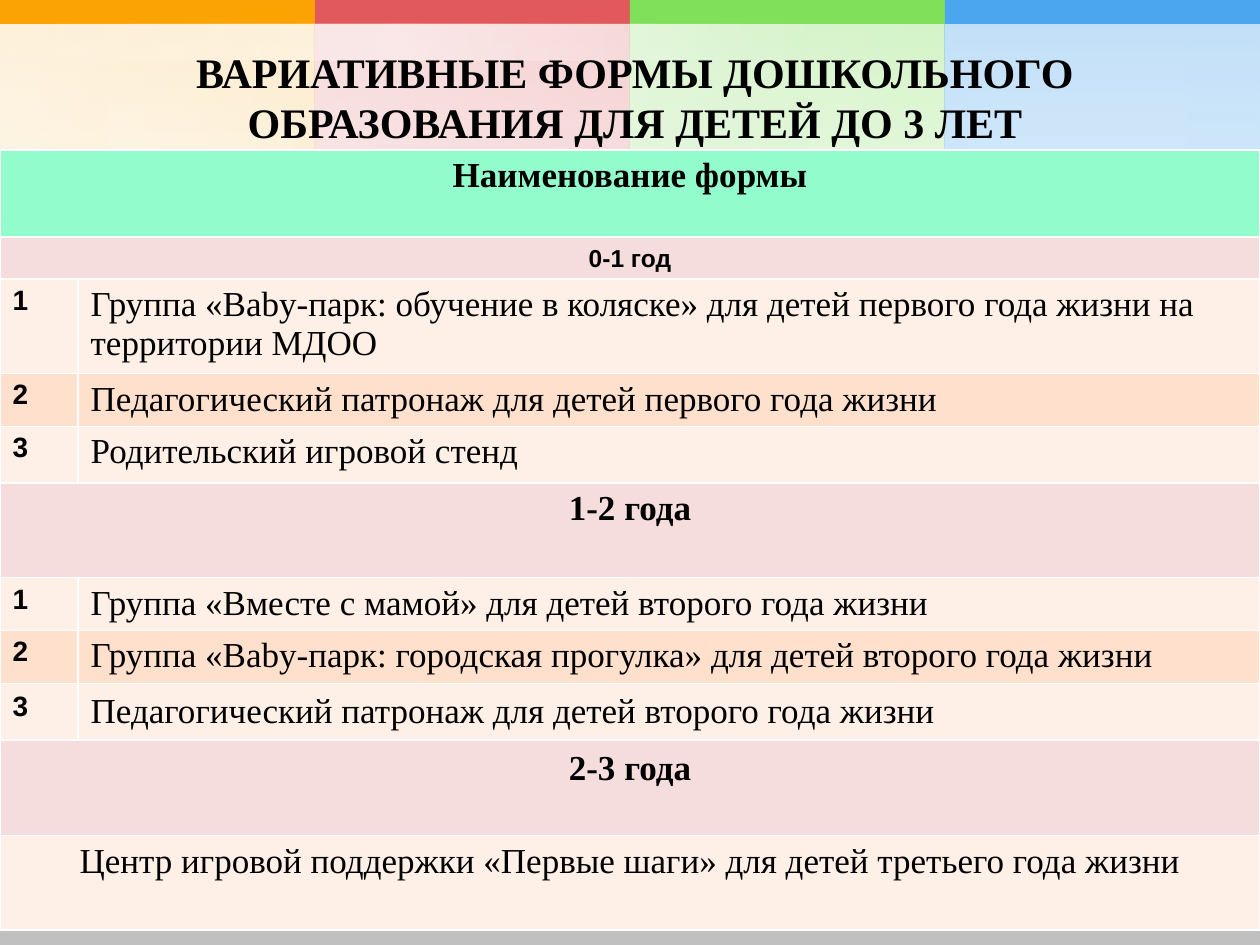
from lxml import etree
from pptx import Presentation
from pptx.dml.color import RGBColor
from pptx.enum.shapes import MSO_SHAPE as Shape
from pptx.enum.text import MSO_ANCHOR as Anchor, PP_ALIGN as Align
from pptx.oxml import parse_xml
from pptx.oxml.ns import nsdecls, qn
from pptx.util import Inches, Pt

SERIF, SANS = "Times New Roman", "Arial"
ORANGE, RED, GREEN, BLUE = "FCA304", "E1595C", "80E05A", "4BA5EF"
WHITE, BLACK, GREY = "FFFFFF", "000000", "C0C0C0"
MINT, PINK, CREAM, PEACH = "92FCCC", "F5DCDD", "FEF0E7", "FEE0CC"

HEADING = dict(name=SERIF, size=Pt(20), bold=True)
AGE = dict(name=SANS, size=Pt(14), bold=True)
NUMBER = dict(name=SANS, size=Pt(16), bold=True)
ENTRY = dict(name=SERIF, size=Pt(20), bold=False)


def color(value):
    return RGBColor.from_string(value)


def fade(tint, alpha):
    """Stops of a gradient that fades out downwards."""
    return [(0, tint, alpha), (100, WHITE, 0)]


def glow(tint, alpha):
    """Stops of a gradient that is strongest in the middle."""
    return [(0, WHITE, 0), (50, tint, alpha), (100, WHITE, 0)]


class SlideBuilder:
    def __init__(self, deck):
        self.page = deck.slides.add_slide(deck.slide_layouts[5])

    def group(self):
        return self.page.shapes.add_group_shape().shapes

    def rect(self, shapes, bounds, fill, rotation=0):
        shape = shapes.add_shape(Shape.RECTANGLE, *map(Inches, bounds))
        shape.shadow.inherit = False
        shape.line.fill.background()
        shape.rotation = rotation
        if isinstance(fill, str):
            shape.fill.solid()
            shape.fill.fore_color.rgb = color(fill)
        else:
            self.gradient(shape, fill)

    def gradient(self, shape, stops):
        shape.fill.background()
        gradient = parse_xml(
            f'<a:gradFill {nsdecls("a")} rotWithShape="1"><a:gsLst/>'
            '<a:lin ang="5400000" scaled="0"/></a:gradFill>')
        for position, tint, alpha in stops:
            stop = etree.SubElement(gradient[0], qn("a:gs"), pos=str(position * 1000))
            rgb = etree.SubElement(stop, qn("a:srgbClr"), val=tint)
            etree.SubElement(rgb, qn("a:alpha"), val=str(alpha * 1000))
        properties = shape.element.spPr
        properties.replace(properties.find(qn("a:noFill")), gradient)

    def text(self, frame, words, style, align, spacing=1.0):
        para = frame.paragraphs[0]
        para.alignment = align
        para.line_spacing = spacing
        span = para.add_run()
        span.text = words
        span.font.color.rgb = color(BLACK)
        for key, value in style.items():
            setattr(span.font, key, value)

    def title(self, bounds, words, style):
        box = self.page.shapes.title
        box.left, box.top, box.width, box.height = map(Inches, bounds)
        frame = box.text_frame
        frame.word_wrap = True
        frame.vertical_anchor = Anchor.BOTTOM
        frame.margin_bottom = Inches(0.38)
        self.text(frame, words, style, Align.CENTER)
        # Bring the title in front of the background
        box.element.getparent().append(box.element)

    def table(self, bounds, widths, rows):
        table = self.page.shapes.add_table(
            len(rows), len(widths), *map(Inches, bounds)).table
        for column, width in zip(table.columns, widths):
            column.width = Inches(width)
        for index, (height, fill, spacing, *parts) in enumerate(rows):
            table.rows[index].height = Inches(height)
            cells = [table.cell(index, place) for place in range(len(widths))]
            for cell in cells:
                cell.fill.solid()
                cell.fill.fore_color.rgb = color(fill)
            if len(parts) == 1:
                cells[0].merge(cells[-1])
            for cell, (words, style, align) in zip(cells, parts):
                self.text(cell.text_frame, words, style, align, spacing)


def banner(height, fill, words, style=HEADING, spacing=1.0):
    return height, fill, spacing, (words, style, Align.CENTER)


def entry(height, number, words, align=Align.LEFT, spacing=1.0):
    fill = CREAM if number % 2 else PEACH
    return (height, fill, spacing, (str(number), NUMBER, Align.LEFT),
            (words, ENTRY, align))


def main():
    deck = Presentation()
    deck.slide_width, deck.slide_height = Inches(10), Inches(7.5)
    slide = SlideBuilder(deck)

    # Colour columns: tint, left, height, inner glows as (left, width, height)
    columns = [
        (RED, 2.5, 7.5, [(2.92, 1.83, 7.5)]),
        (GREEN, 5, 5.62, [(5, 1.41, 5.62)]),
        (BLUE, 7.5, 7.47, [(7.5, 0.19, 6.37), (9.41, 0.59, 6.37)]),
        (ORANGE, 0, 5.62, [(2.32, 0.18, 5.62), (0, 0.84, 5.62)]),
    ]
    for tint, left, height, glows in columns:
        column = slide.group()
        base = (left, 0, 2.5, height)
        slide.rect(column, base, fade(tint, 20))
        for glow_left, width, glow_height in glows:
            slide.rect(column, (glow_left, 0, width, glow_height), glow(tint, 20))
        slide.rect(column, base, fade(tint, 20))

    # Solid strip along the top
    strip = slide.group()
    for index, tint in enumerate([ORANGE, RED, GREEN, BLUE]):
        slide.rect(strip, (2.5 * index, 0, 2.5, 0.19), tint)

    # White haze behind the title
    haze = slide.group()
    panel = (3.15, -2.95, 1.22, 7.51)
    for bounds, stops in [
        ((4.16, -2.85, 0.1, 8.42), glow(WHITE, 35)),
        (panel, fade(WHITE, 35)),
        ((3.06, -2.87, 0.29, 6.41), glow(WHITE, 35)),
        (panel, fade(WHITE, 35)),
    ]:
        slide.rect(haze, bounds, stops, rotation=270)

    # Footer bar
    slide.rect(slide.page.shapes, (0, 7.38, 10, 0.12), GREY)

    # Title
    slide.title((0.79, 0.21, 8.5, 1.34),
                "ВАРИАТИВНЫЕ ФОРМЫ ДОШКОЛЬНОГО ОБРАЗОВАНИЯ ДЛЯ ДЕТЕЙ ДО 3 ЛЕТ",
                dict(name=SERIF, size=Pt(24), bold=True))

    # Table of forms by age
    rows = [
        banner(0.69, MINT, "Наименование формы"),
        banner(0.33, PINK, "0-1 год", AGE, 1.07),
        entry(0.75, 1, "Группа «Baby-парк: обучение в коляске» для детей "
                       "первого года жизни на территории МДОО"),
        entry(0.42, 2, "Педагогический патронаж для детей первого года жизни"),
        entry(0.45, 3, "Родительский игровой стенд"),
        banner(0.75, PINK, "1-2 года"),
        entry(0.42, 1, "Группа «Вместе с мамой» для детей второго года жизни"),
        entry(0.42, 2, "Группа «Baby-парк: городская прогулка» для детей "
                       "второго года жизни"),
        entry(0.45, 3, "Педагогический патронаж для детей второго года жизни",
              Align.JUSTIFY, 1.07),
        banner(0.76, PINK, "2-3 года", spacing=1.07),
        banner(0.75, CREAM, "Центр игровой поддержки «Первые шаги» для детей "
                            "третьего года жизни", ENTRY),
    ]
    slide.table((0, 1.19, 10, 6.19), [0.62, 9.38], rows)

    deck.save("out.pptx")


if __name__ == "__main__":
    main()
